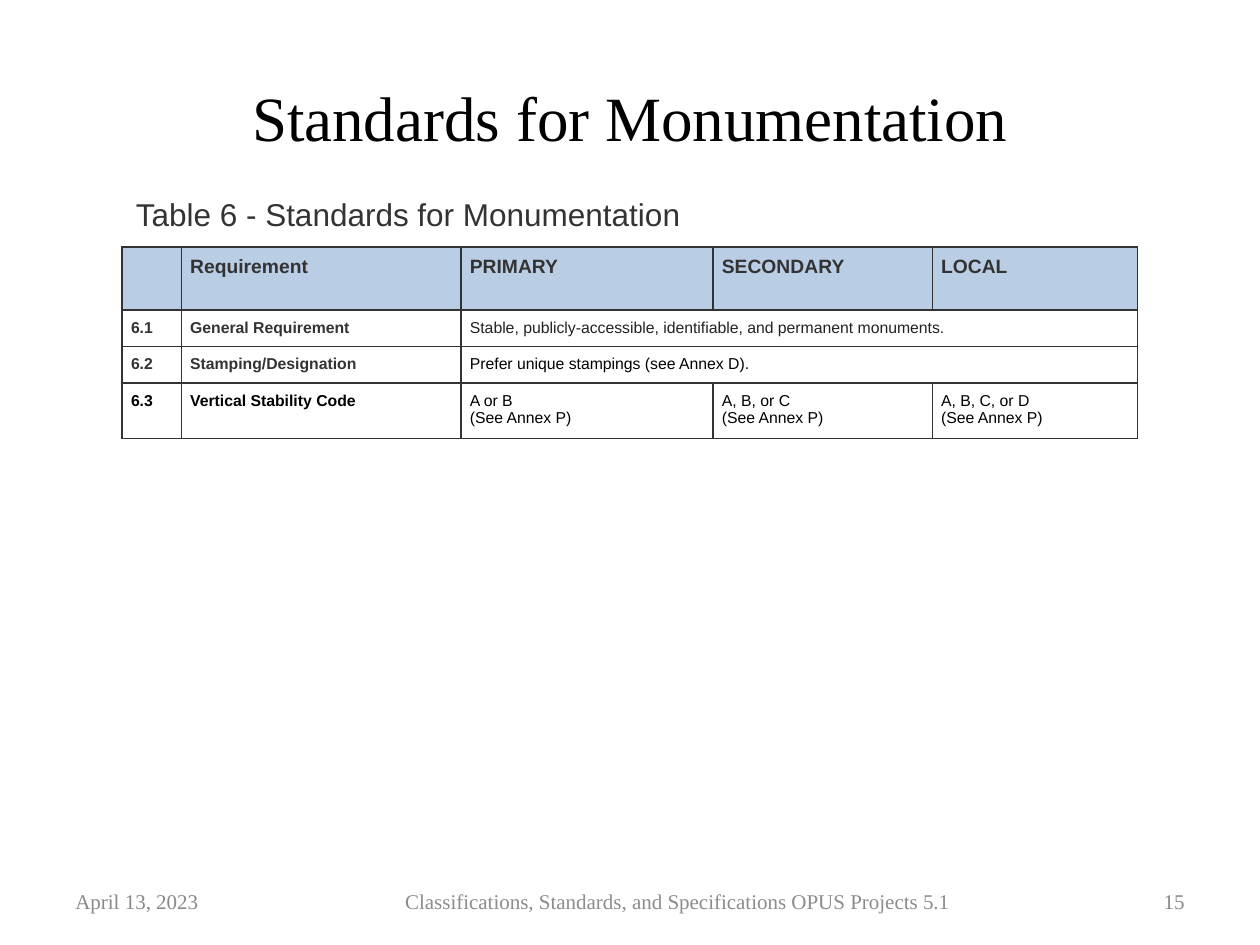
from lxml import etree
from pptx import Presentation
from pptx.dml.color import RGBColor
from pptx.enum.text import MSO_ANCHOR, PP_ALIGN
from pptx.oxml.ns import qn
from pptx.util import Inches, Pt

LEFT, CENTER, RIGHT = PP_ALIGN.LEFT, PP_ALIGN.CENTER, PP_ALIGN.RIGHT
MIDDLE = MSO_ANCHOR.MIDDLE
SERIF, SANS = "Times New Roman", "Arial"
DARK, BLACK, GRAY = "333333", "000000", "898989"


def rgb(value):
    return RGBColor.from_string(value)


def style(text_frame, font_name, size, color, bold=False, align=LEFT):
    for paragraph in text_frame.paragraphs:
        paragraph.alignment = align
        for run in paragraph.runs:
            run.font.name = font_name
            run.font.size = Pt(size)
            run.font.bold = bold
            run.font.color.rgb = rgb(color)


prs = Presentation()
prs.slide_width, prs.slide_height = Inches(10), Inches(7.5)
slide = prs.slides.add_slide(prs.slide_layouts[6])

labels = [
    ("Standards for Monumentation", 0.5, 0.3, 9, 1.25, SERIF, 36, BLACK, CENTER),
    ("April 13, 2023", 0.5, 6.95, 1.4, 0.4, SERIF, 12, GRAY, LEFT),
    ("Classifications, Standards, and Specifications OPUS Projects 5.1",
     2.31, 6.95, 6.14, 0.4, SERIF, 12, "8C8C8C", CENTER),
    ("15", 8.71, 6.95, 0.79, 0.4, SERIF, 12, GRAY, RIGHT),
    ("Table 6 - Standards for Monumentation", 0.98, 1.5, 5.23, 0.4, SANS, 18, DARK, LEFT),
]
for text, left, top, width, height, font_name, size, color, align in labels:
    label = slide.shapes.add_textbox(Inches(left), Inches(top), Inches(width), Inches(height))
    label.text_frame.word_wrap = True
    label.text_frame.vertical_anchor = MIDDLE
    label.text_frame.text = text
    style(label.text_frame, font_name, size, color, align=align)

requirements = [
    ["", "Requirement", "PRIMARY", "SECONDARY", "LOCAL"],
    ["6.1", "General Requirement",
     "Stable, publicly-accessible, identifiable, and permanent monuments.", "", ""],
    ["6.2", "Stamping/Designation", "Prefer unique stampings (see Annex D).", "", ""],
    ["6.3", "Vertical Stability Code", "A or B\n(See Annex P)",
     "A, B, or C\n(See Annex P)", "A, B, C, or D\n(See Annex P)"],
]
heading_colors = [DARK, DARK, DARK, BLACK]
detail_colors = [DARK, "222222", BLACK, BLACK]
column_widths = [0.47, 2.22, 2, 1.74, 1.63]
row_heights = [0.5, 0.29, 0.29, 0.44]

standards = slide.shapes.add_table(
    len(row_heights), len(column_widths), Inches(0.97), Inches(1.96),
    Inches(sum(column_widths)), Inches(sum(row_heights))).table
standards.first_row = False
standards.horz_banding = False
for column, width in zip(standards.columns, column_widths):
    column.width = Inches(width)
for row, height in zip(standards.rows, row_heights):
    row.height = Inches(height)

for r, texts in enumerate(requirements):
    for c, text in enumerate(texts):
        cell = standards.cell(r, c)
        cell.margin_left = cell.margin_right = Inches(0.07)
        cell.margin_top = cell.margin_bottom = Inches(0.07)
        properties = cell._tc.get_or_add_tcPr()
        for side in ("a:lnL", "a:lnR", "a:lnT", "a:lnB"):
            border = etree.SubElement(properties, qn(side), w=str(Pt(1)))
            border_fill = etree.SubElement(border, qn("a:solidFill"))
            etree.SubElement(border_fill, qn("a:srgbClr"), val=DARK)
        if r == 0:
            cell.fill.solid()
            cell.fill.fore_color.rgb = rgb("B9CDE5")
        else:
            cell.fill.background()
        cell.text_frame.text = text
        color = heading_colors[r] if c < 2 else detail_colors[r]
        style(cell.text_frame, SANS, 11 if r == 0 else 9, color, bold=r == 0 or c < 2)

for r in (1, 2):
    standards.cell(r, 2).merge(standards.cell(r, 4))

prs.save("out.pptx")
